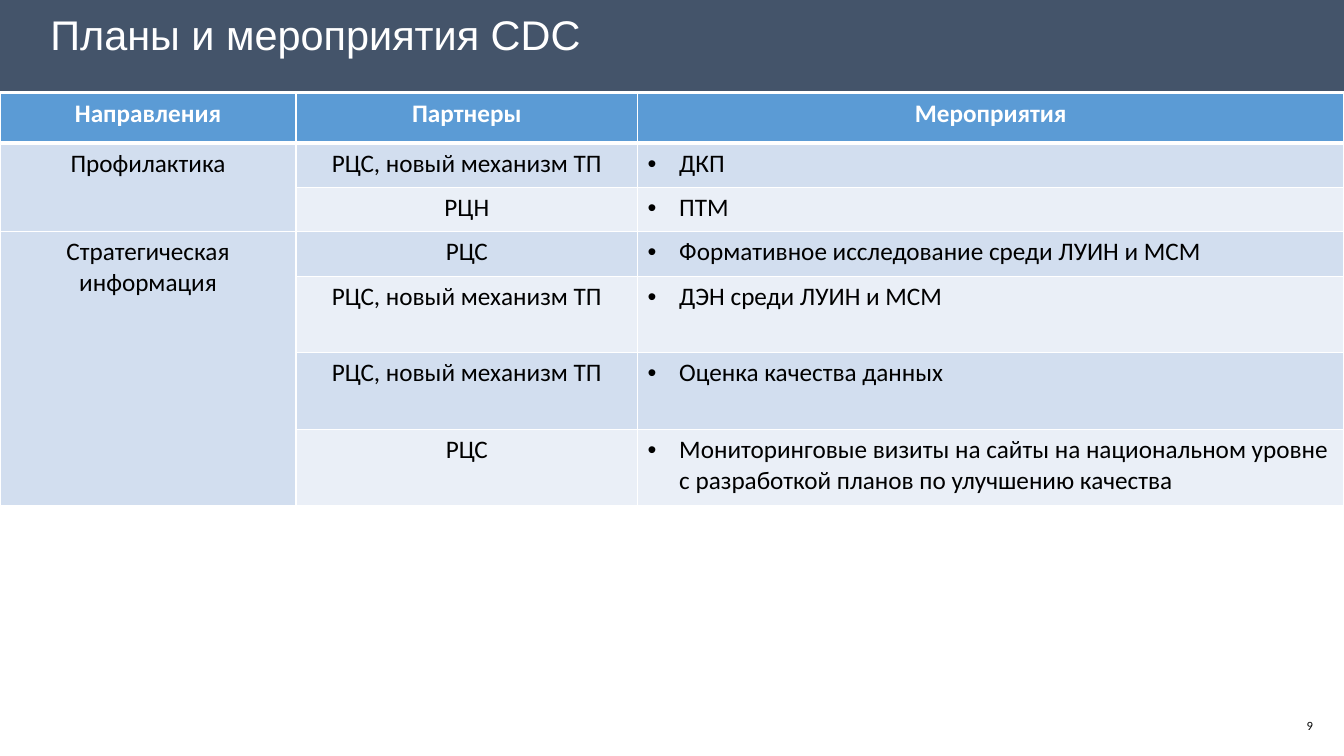
from lxml.etree import SubElement
from pptx import Presentation
from pptx.dml.color import RGBColor
from pptx.enum.shapes import MSO_SHAPE as Shape
from pptx.enum.text import MSO_ANCHOR as Anchor, PP_ALIGN as Align
from pptx.oxml.ns import qn
from pptx.util import Pt

WHITE = RGBColor(0xFF, 0xFF, 0xFF)
BLACK = RGBColor(0, 0, 0)
INK = RGBColor(0x05, 0x06, 0x06)
SLATE = RGBColor(0x44, 0x54, 0x6A)
BLUE = RGBColor(0x5B, 0x9B, 0xD5)
DARK = RGBColor(0xD2, 0xDE, 0xEF)
LIGHT = RGBColor(0xEA, 0xEF, 0xF7)

WIDE, HIGH = 960, 540
COLS = [211.5, 244, 504.5]
ROWS = [35.2, 31.7, 31.7, 31.7, 54.75, 54.75, 54.75]
HEAD = ["Направления", "Партнеры", "Мероприятия"]
PLANS = [
    ("Профилактика", [
        ("РЦС, новый механизм ТП", "ДКП"),
        ("РЦН", "ПТМ"),
    ]),
    ("Стратегическая информация", [
        ("РЦС", "Формативное исследование среди ЛУИН и МСМ"),
        ("РЦС, новый механизм ТП", "ДЭН среди ЛУИН и МСМ"),
        ("РЦС, новый механизм ТП", "Оценка качества данных"),
        ("РЦС", "Мониторинговые визиты на сайты на национальном уровне "
                "с разработкой планов по улучшению качества"),
    ]),
]


def style(para, color, **form):
    for name, value in form.items():
        setattr(para.font, name, value)
    para.font.color.rgb = color


def indent(para, left, first):
    props = para._p.get_or_add_pPr()
    props.set("marL", str(Pt(left)))
    props.set("indent", str(Pt(first)))
    return props


def add_text(slide, box, text, pads, anchor=Anchor.TOP):
    """Add a wrapped text box and return its paragraph."""
    frame = slide.shapes.add_textbox(*map(Pt, box)).text_frame
    sides = ("left", "top", "right", "bottom")
    for side, pad in zip(sides, pads):
        setattr(frame, f"margin_{side}", Pt(pad))
    frame.word_wrap = True
    frame.vertical_anchor = anchor
    para = frame.paragraphs[0]
    para.text = text
    return para


def add_title(slide, box, text):
    left, top, width, height = box
    band = slide.shapes.add_shape(Shape.RECTANGLE, *map(Pt, box))
    band.shadow.inherit = False
    band.fill.solid()
    band.fill.fore_color.rgb = SLATE
    band.line.fill.background()
    area = (left + 18, top + 16, width - 39, height - 29)
    para = add_text(slide, area, text, (0, 0, 0, 0))
    indent(para, 36, -18)
    para.line_spacing = 0.7
    style(para, WHITE, name="Arial", size=Pt(29.6))


def add_border(cell, sides):
    props = cell._tc.get_or_add_tcPr()
    for side in "LRTB":
        line = SubElement(props, qn(f"a:ln{side}"), w=str(Pt(sides.get(side, 1))))
        fill = SubElement(line, qn("a:solidFill"))
        SubElement(fill, qn("a:srgbClr"), val=str(WHITE))


def fill_cell(cell, text, fill, color=BLACK, bold=False, bullet=False):
    cell.fill.solid()
    cell.fill.fore_color.rgb = fill
    para = cell.text_frame.paragraphs[0]
    para.text = text
    if bullet:
        props = indent(para, 22.5, -22.5)
        SubElement(props, qn("a:buFont"), typeface="Arial")
        SubElement(props, qn("a:buChar"), char="•")
    else:
        para.alignment = Align.CENTER
    style(para, color, name="Calibri", size=Pt(18), bold=bold)


def add_plans(slide, left, top):
    box = (left, top, sum(COLS), sum(ROWS))
    table = slide.shapes.add_table(len(ROWS), len(COLS), *map(Pt, box)).table
    for col, width in zip(table.columns, COLS):
        col.width = Pt(width)
    for row, height in zip(table.rows, ROWS):
        row.height = Pt(height)
    heavy = {0: {"B": 3}, 1: {"T": 3}}
    for num, row in enumerate(table.rows):
        for cell in row.cells:
            add_border(cell, heavy.get(num, {}))

    for col, text in enumerate(HEAD):
        fill_cell(table.cell(0, col), text, BLUE, WHITE, bold=True)
    row = 1
    for area, tasks in PLANS:
        table.cell(row, 0).merge(table.cell(row + len(tasks) - 1, 0))
        fill_cell(table.cell(row, 0), area, DARK)
        for partner, task in tasks:
            fill = DARK if row % 2 else LIGHT
            fill_cell(table.cell(row, 1), partner, fill)
            fill_cell(table.cell(row, 2), task, fill, bullet=True)
            row += 1


def add_number(slide, box, text):
    para = add_text(slide, box, text, (7.2, 3.6, 7.2, 3.6), Anchor.MIDDLE)
    para.alignment = Align.RIGHT
    style(para, INK, name="Calibri", size=Pt(9))


def main():
    deck = Presentation()
    deck.slide_width, deck.slide_height = Pt(WIDE), Pt(HIGH)
    slide = deck.slides.add_slide(deck.slide_layouts[6])
    add_title(slide, (0, 0, WIDE, 65), "Планы и мероприятия CDC")
    add_plans(slide, 0, 67)
    add_number(slide, (899, 504, 46, 29), "9")
    deck.save("out.pptx")


if __name__ == "__main__":
    main()
